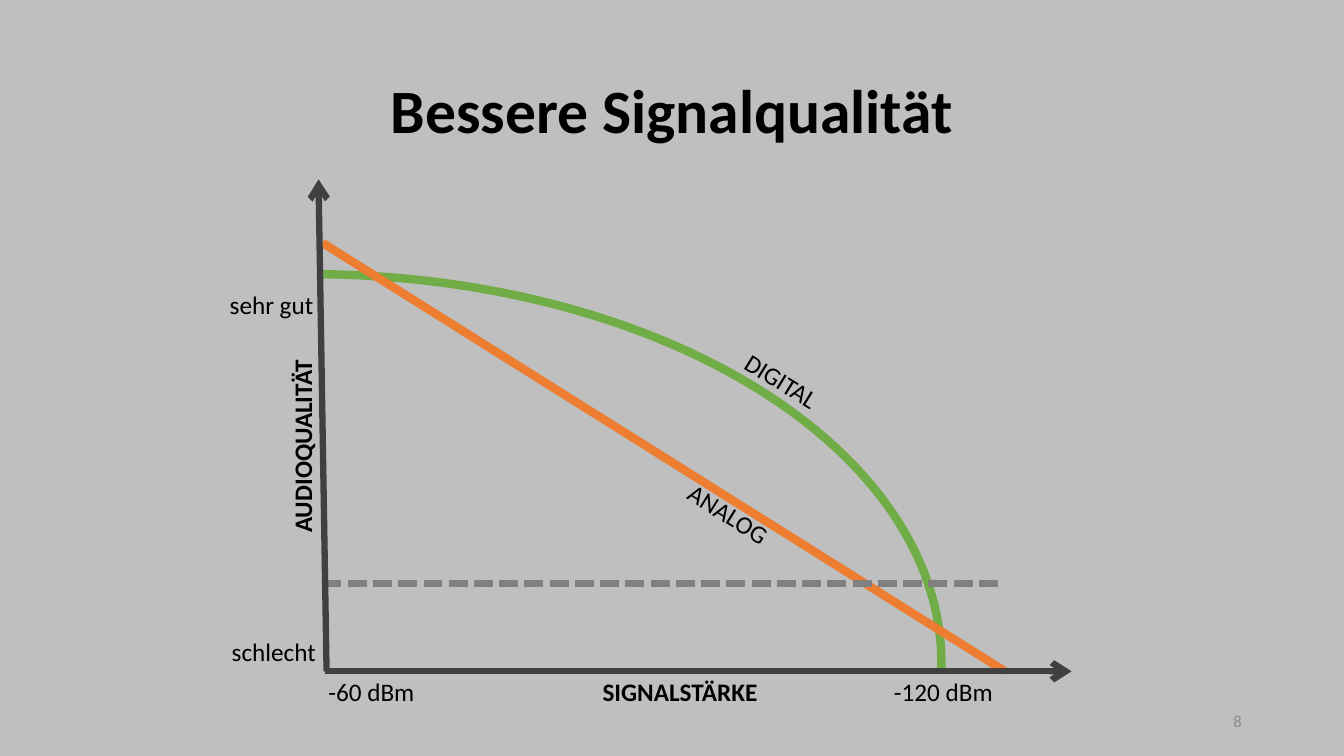
from pptx import Presentation, util as u
from pptx.dml.color import RGBColor
from pptx.enum import dml, shapes, text
from pptx.oxml.ns import qn
from lxml import etree

COLORS = {
    "background": "BFBFBF",
    "text": "000000",
    "number": "8C8C8C",
    "digital": "70AD47",
    "analog": "ED7D31",
    "threshold": "808080",
    "axis": "404040",
}

presentation = Presentation()
presentation.slide_width = u.Inches(13.33)
presentation.slide_height = u.Inches(7.5)
slide = presentation.slides.add_slide(presentation.slide_layouts[5])
slide.background.fill.solid()
slide.background.fill.fore_color.rgb = RGBColor.from_string(COLORS["background"])


def place(*percents):
    """Turn alternating shares of slide width and height into lengths."""
    sides = (presentation.slide_width, presentation.slide_height) * 2
    return [round(side * percent / 100) for side, percent in zip(sides, percents)]


def format_text(shape, size, color, alignment, anchor, bold=False):
    shape.text_frame.vertical_anchor = anchor
    paragraph = shape.text_frame.paragraphs[0]
    paragraph.alignment = alignment
    font = paragraph.runs[0].font
    font.name, font.size, font.bold = "Calibri", u.Pt(size), bold
    font.color.rgb = RGBColor.from_string(COLORS[color])


# Title
title = slide.shapes.title
title.left, title.top, title.width, title.height = place(6.9, 5.33, 86.25, 19.33)
title.text_frame.text = "Bessere Signalqualität"
title.text_frame.paragraphs[0].line_spacing = 0.9
format_text(title, 44, "text", text.PP_ALIGN.CENTER, text.MSO_ANCHOR.MIDDLE, True)

# Slide number
number = slide.shapes.add_textbox(*place(70.65, 92.67, 22.5, 5.33))
number.text_frame.text = "8"
format_text(number, 12, "number", text.PP_ALIGN.RIGHT, text.MSO_ANCHOR.MIDDLE)

# Digital curve: a quarter of an ellipse
diagram = slide.shapes.add_group_shape()
digital = diagram.shapes.add_shape(
    shapes.MSO_SHAPE.ARC, *place(-23.85, 36.27, 93.9, 102.93))
digital.adjustments[0], digital.adjustments[1] = 162.829, 0.346
digital.shadow.inherit = False
digital.fill.background()
digital.line.color.rgb = RGBColor.from_string(COLORS["digital"])
digital.line.width = u.Pt(6)

# Analog line, threshold and both axes
baseline = 88.8
lines = [
    ("analog", 6, (24, 32.13, 74.78, baseline)),
    ("threshold", 4.5, (24, 77.2, 74.4, 77.2)),
    ("axis", 4.5, (24.3, baseline, 23.7, 23.73)),
    ("axis", 4.5, (24.15, baseline, 79.73, baseline)),
]
for name, width, ends in lines:
    connector = diagram.shapes.add_connector(
        shapes.MSO_CONNECTOR.STRAIGHT, *place(*ends))
    connector.line.color.rgb = RGBColor.from_string(COLORS[name])
    connector.line.width = u.Pt(width)
    if name == "threshold":
        connector.line.dash_style = dml.MSO_LINE.SQUARE_DOT
        dash = connector.line._get_or_add_ln().find(qn("a:prstDash"))
        dash.set("val", "sysDash")
    if name == "axis":
        outline = connector.line._get_or_add_ln()
        etree.SubElement(outline, qn("a:tailEnd"), type="arrow")
    etree.SubElement(connector._element.spPr, qn("a:effectLst"))

# Labels: wording, left, top, width, rotation, bold
labels = [
    ("ANALOG", 50.18, 65.33, 8.1, 31.9, False),
    ("DIGITAL", 54.45, 47.73, 7.5, 31.9, False),
    ("SIGNALSTÄRKE", 44.1, baseline, 13.13, 0, True),
    ("AUDIOQUALITÄT", 15.23, 56.27, 14.48, 270, True),
    ("-120 dBm", 65.78, baseline, 8.93, 0, False),
    ("-60 dBm", 23.7, baseline, 7.95, 0, False),
    ("schlecht", 16.5, 83.47, 7.88, 0, False),
    ("sehr gut", 16.35, 37.6, 7.8, 0, False),
]
for wording, left, top, width, rotation, bold in labels:
    label = diagram.shapes.add_textbox(*place(left, top, width, 5.33))
    label.rotation = rotation
    label.text_frame.text = wording
    label.text_frame.word_wrap = False
    label.text_frame.auto_size = text.MSO_AUTO_SIZE.SHAPE_TO_FIT_TEXT
    format_text(label, 18, "text", text.PP_ALIGN.LEFT, text.MSO_ANCHOR.TOP, bold)

presentation.save("out.pptx")
